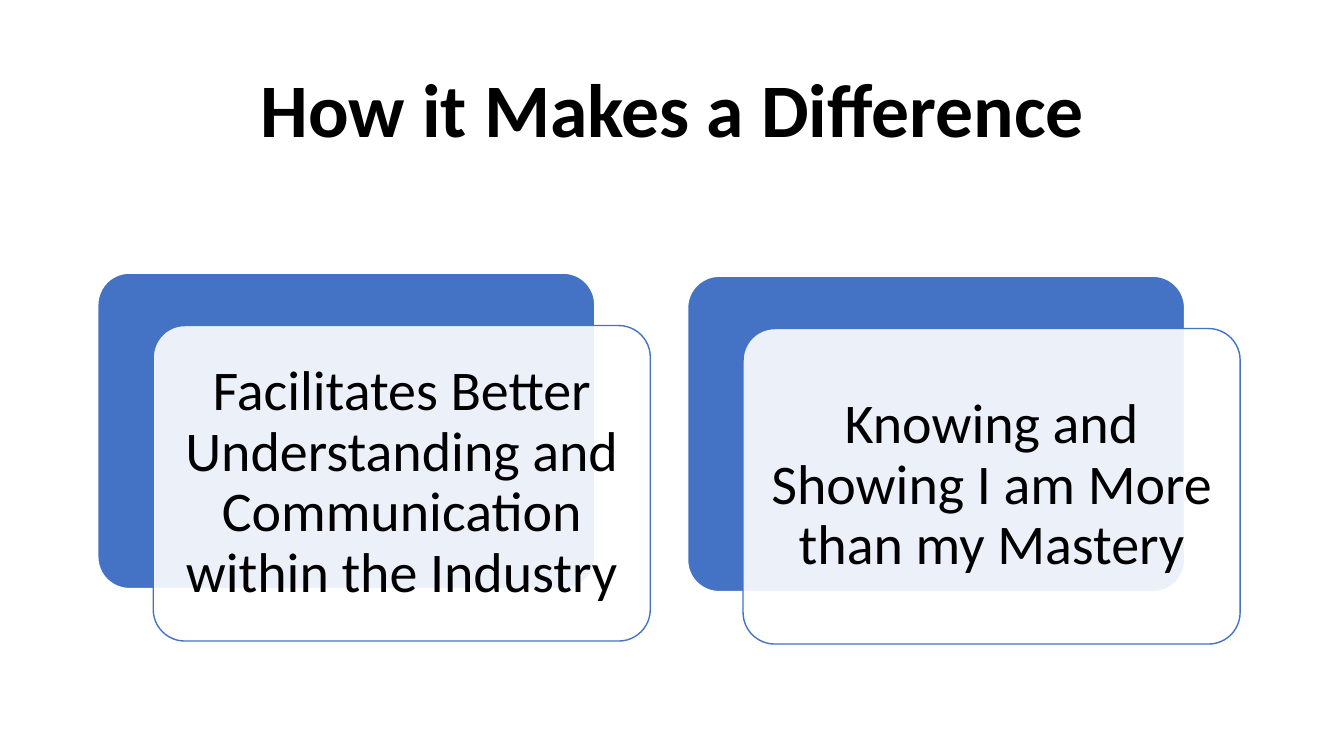
from dataclasses import dataclass

from lxml import etree
from pptx import Presentation
from pptx import util as u
from pptx.dml.color import RGBColor
from pptx.enum import shapes, text
from pptx.oxml.ns import qn

BLUE, WHITE, BLACK = "4472C4", "FFFFFF", "000000"
CARD_WIDTH, CARD_HEIGHT = 4.93, 3.13
FRONT_OFFSET_X, FRONT_OFFSET_Y = 0.55, 0.52
FRAME_FORMAT = {"word_wrap": True, "auto_size": text.MSO_AUTO_SIZE.NONE,
                "vertical_anchor": text.MSO_ANCHOR.MIDDLE}
CARD_MARGINS = {f"margin_{side}": u.Inches(0.17)
                for side in ("left", "right", "top", "bottom")}


@dataclass
class Benefit:
    wording: str
    left: float
    top: float


BENEFITS = [
    Benefit("Knowing and Showing I am More than my Mastery", 6.82, 2.74),
    Benefit("Facilitates Better Understanding and Communication within the Industry",
            0.97, 2.71),
]


def color(hex_value: str) -> RGBColor:
    return RGBColor.from_string(hex_value)


def set_all(target, values: dict) -> None:
    for attribute, value in values.items():
        setattr(target, attribute, value)


def write(shape, wording: str, size: int, bold: bool = False) -> None:
    set_all(shape.text_frame, FRAME_FORMAT)
    paragraph = shape.text_frame.paragraphs[0]
    set_all(paragraph, {"alignment": text.PP_ALIGN.CENTER, "line_spacing": 0.9})
    run = paragraph.add_run()
    run.text = wording
    set_all(run.font, {"name": "Calibri", "size": u.Pt(size), "bold": bold})
    run.font.color.rgb = color(BLACK)


def add_card(slide, left: float, top: float, fill: str, line: str):
    card = slide.shapes.add_shape(
        shapes.MSO_SHAPE.ROUNDED_RECTANGLE,
        *map(u.Inches, (left, top, CARD_WIDTH, CARD_HEIGHT)))
    card.adjustments[0] = 0.1
    card.shadow.inherit = False
    card.fill.solid()
    card.fill.fore_color.rgb = color(fill)
    card.line.color.rgb = color(line)
    card.line.width = u.Pt(1)
    return card


def set_opacity(shape, percent: int) -> None:
    fill = shape.element.spPr.find(qn("a:solidFill"))
    etree.SubElement(fill[0], qn("a:alpha"), val=str(percent * 1000))


def add_benefit(slide, benefit: Benefit) -> None:
    """Draw a solid back card and a translucent front card holding the wording."""
    add_card(slide, benefit.left, benefit.top, BLUE, WHITE)
    front = add_card(slide, benefit.left + FRONT_OFFSET_X,
                     benefit.top + FRONT_OFFSET_Y, WHITE, BLUE)
    set_opacity(front, 90)
    set_all(front.text_frame, CARD_MARGINS)
    write(front, benefit.wording, 40)


def main() -> None:
    deck = Presentation()
    set_all(deck, {"slide_width": u.Inches(13.33), "slide_height": u.Inches(7.5)})
    slide = deck.slides.add_slide(deck.slide_layouts[5])
    heading = slide.shapes.title
    set_all(heading, {"left": u.Inches(0.92), "top": u.Inches(0.4),
                      "width": u.Inches(11.5), "height": u.Inches(1.45)})
    write(heading, "How it Makes a Difference", 54, bold=True)
    for benefit in BENEFITS:
        add_benefit(slide, benefit)
    deck.save("out.pptx")


if __name__ == "__main__":
    main()
